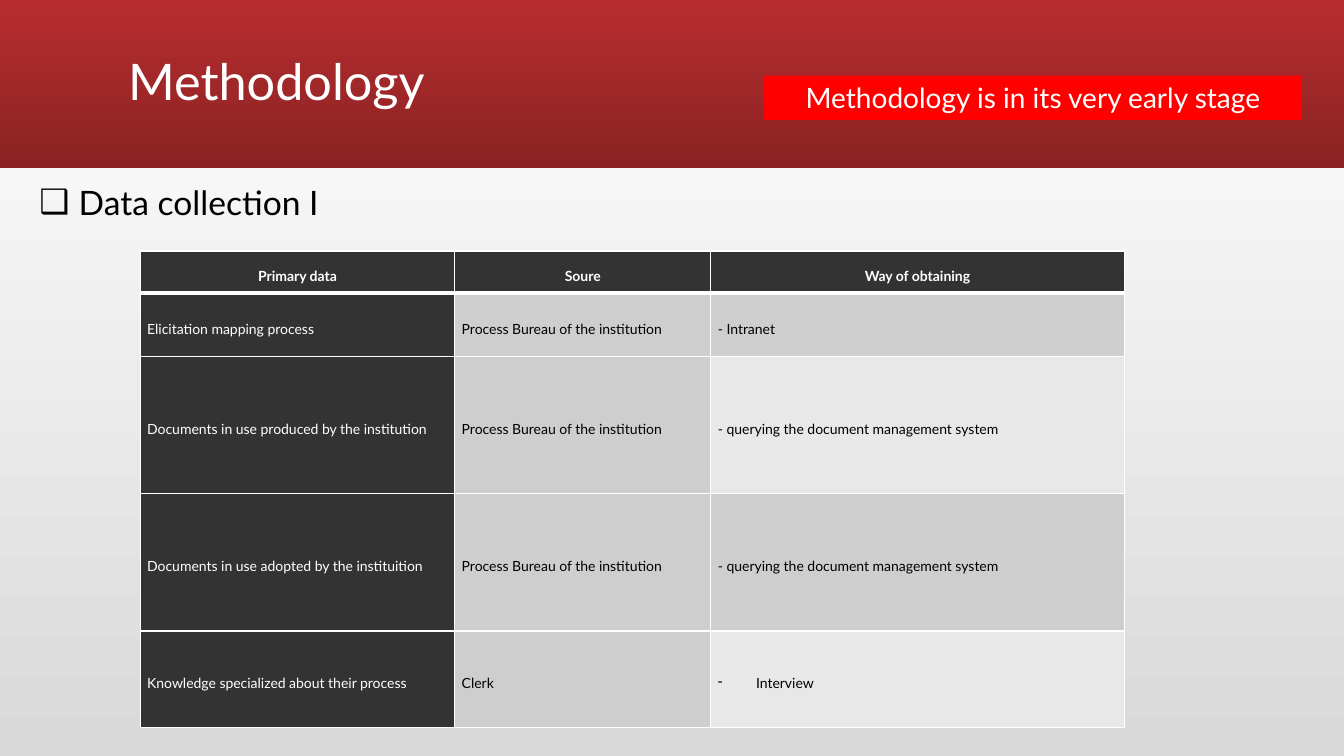
from lxml import etree
from pptx import Presentation
from pptx.dml.color import RGBColor
from pptx.enum.shapes import MSO_SHAPE as Shape
from pptx.enum.text import MSO_ANCHOR as Anchor, PP_ALIGN as Align
from pptx.oxml.ns import qn
from pptx.util import Inches, Pt

WHITE = RGBColor(0xFF, 0xFF, 0xFF)
BLACK = RGBColor(0x00, 0x00, 0x00)
RED = RGBColor(0xFF, 0x00, 0x00)
BAND_TOP = RGBColor(0xB8, 0x2D, 0x2F)
BAND_BOTTOM = RGBColor(0x8A, 0x22, 0x23)
BACK_GREY = RGBColor(0xD9, 0xD9, 0xD9)
CHARCOAL = RGBColor(0x33, 0x33, 0x33)
MID_GREY = RGBColor(0xCE, 0xCE, 0xCE)
LIGHT_GREY = RGBColor(0xE8, 0xE8, 0xE8)


def write(paragraph, text, size, color, bold=False, **layout):
    """Add a run of text; layout holds paragraph settings such as alignment."""
    for name, value in layout.items():
        setattr(paragraph, name, value)
    run = paragraph.add_run()
    run.text = text
    font_format = {"name": "Lato", "size": Pt(size), "bold": bold}
    for name, value in font_format.items():
        setattr(run.font, name, value)
    run.font.color.rgb = color


def add_bullet(paragraph, symbol, indent):
    props = paragraph._p.get_or_add_pPr()
    props.set("marL", str(Inches(indent)))
    props.set("indent", str(-Inches(indent)))
    etree.SubElement(props, qn("a:buChar")).set("char", symbol)


prs = Presentation()
prs.slide_width, prs.slide_height = Inches(13.33), Inches(7.5)
slide = prs.slides.add_slide(prs.slide_layouts[1])
shapes = slide.shapes
title, heading = slide.placeholders

# Background and title band
band = shapes.add_shape(Shape.RECTANGLE, 0, 0, prs.slide_width, Inches(1.67))
band.shadow.inherit = False
band.line.fill.background()
shapes._spTree.insert(2, band._element)
for fill, angle, colors in (
    (slide.background.fill, 90, (BACK_GREY, WHITE)),
    (band.fill, 270, (BAND_TOP, BAND_BOTTOM)),
):
    fill.gradient()
    fill.gradient_angle = angle
    for stop, color in zip(fill.gradient_stops, colors):
        stop.color.rgb = color

# Title and heading
for holder, box in ((title, (1.17, 0.11, 11, 1.45)), (heading, (0.29, 1.75, 3.31, 0.5))):
    holder.left, holder.top, holder.width, holder.height = map(Inches, box)
title.text_frame.vertical_anchor = Anchor.MIDDLE
write(title.text_frame.paragraphs[0], "Methodology", 36, WHITE,
      alignment=Align.LEFT, line_spacing=0.9)
heading_line = heading.text_frame.paragraphs[0]
write(heading_line, "Data collection I", 24, BLACK, space_before=Pt(0))
add_bullet(heading_line, "❑", 0.39)

# Data collection table
column_widths = (3.12, 2.54, 4.1)
row_heights = (0.42, 0.63, 1.36, 1.36, 0.96)
bureau = "Process Bureau of the institution"
query = "- querying the document management system"
rows = (
    ("Primary data", "Soure", "Way of obtaining"),
    ("Elicitation mapping process", bureau, "- Intranet"),
    ("Documents in use produced by the institution", bureau, query),
    ("Documents in use adopted by the instituition", bureau, query),
    ("Knowledge specialized about their process", "Clerk", "Interview"),
)
table = shapes.add_table(
    len(rows), len(column_widths), Inches(1.39), Inches(2.49),
    Inches(sum(column_widths)), Inches(sum(row_heights))).table
for column, width in zip(table.columns, column_widths):
    column.width = Inches(width)
for row, height in zip(table.rows, row_heights):
    row.height = Inches(height)

cell_format = {
    "vertical_anchor": Anchor.MIDDLE,
    "margin_left": Inches(0.07), "margin_right": Inches(0.07),
    "margin_top": 0, "margin_bottom": 0,
}
for r, texts in enumerate(rows):
    for c, text in enumerate(texts):
        cell = table.cell(r, c)
        header = r == 0
        dark = header or c == 0
        for name, value in cell_format.items():
            setattr(cell, name, value)
        props = cell._tc.get_or_add_tcPr()
        for side in ("L", "R", "T", "B"):
            thick = (side == "B" and header) or (side == "T" and r == 1)
            border = etree.SubElement(props, qn(f"a:ln{side}"), w=str(Pt(3 if thick else 1)))
            border_fill = etree.SubElement(border, qn("a:solidFill"))
            etree.SubElement(border_fill, qn("a:srgbClr"), val=str(WHITE))
        cell.fill.solid()
        if dark:
            cell.fill.fore_color.rgb = CHARCOAL
        else:
            cell.fill.fore_color.rgb = LIGHT_GREY if c == 2 and r % 2 == 0 else MID_GREY
        write(cell.text_frame.paragraphs[0], text, 10, WHITE if dark else BLACK, header,
              alignment=Align.CENTER if header else Align.LEFT, line_spacing=1.5)
interview = table.cell(4, 2).text_frame.paragraphs[0]
interview.alignment = Align.JUSTIFY
add_bullet(interview, "-", 0.38)

# Status note
note = shapes.add_shape(Shape.RECTANGLE, Inches(7.58), Inches(0.75), Inches(5.33), Inches(0.44))
note.shadow.inherit = False
note.fill.solid()
note.fill.fore_color.rgb = RED
note.line.fill.background()
note.text_frame.word_wrap = True
write(note.text_frame.paragraphs[0], "Methodology is in its very early stage", 20, WHITE,
      alignment=Align.CENTER)

prs.save("out.pptx")
